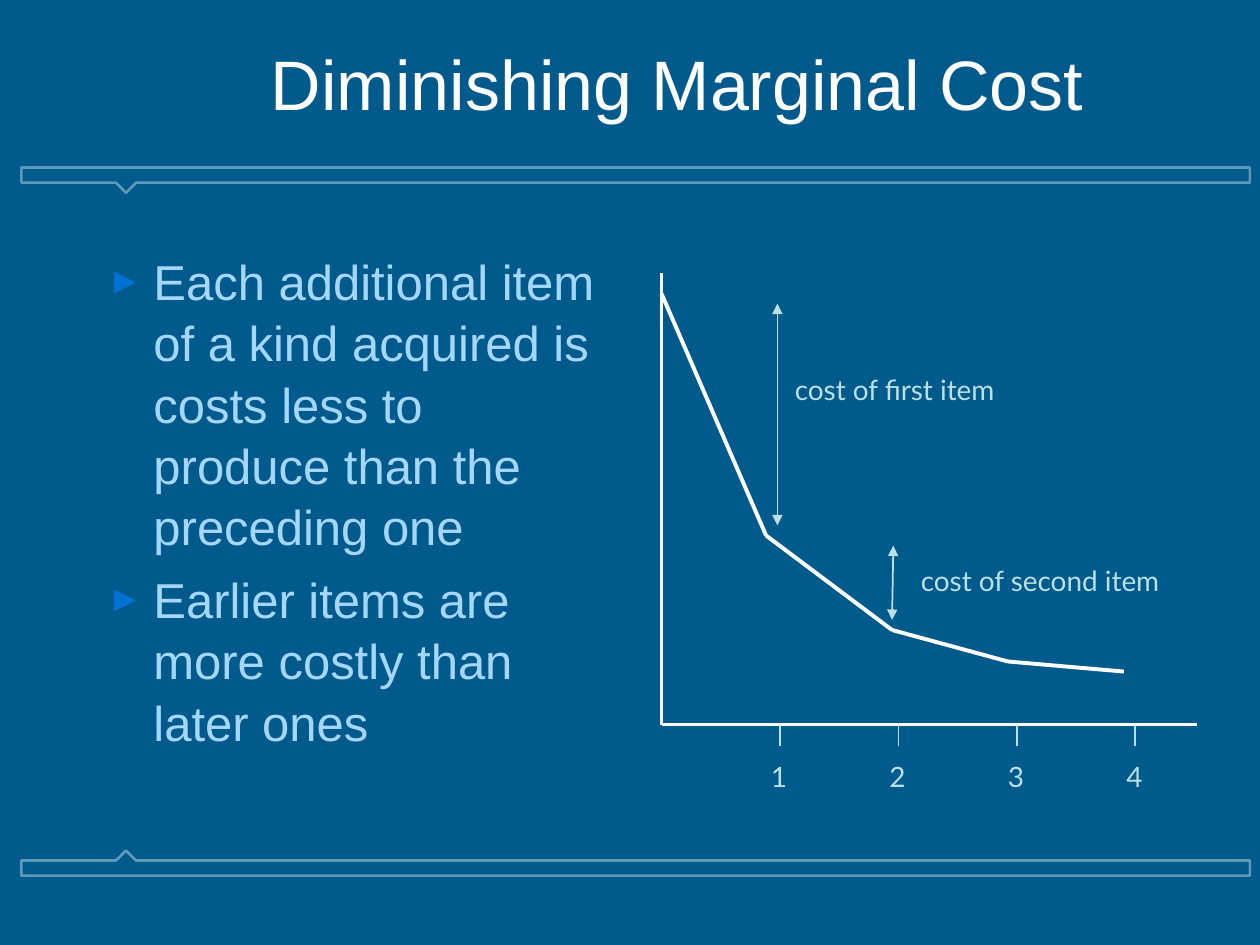
from dataclasses import dataclass
from itertools import pairwise

import pptx
import pptx.dml.color
import pptx.enum.shapes
import pptx.enum.text
import pptx.oxml.ns
import pptx.util
from lxml import etree
from pptx.util import Inches

RGBColor = pptx.dml.color.RGBColor
Align = pptx.enum.text.PP_ALIGN
Anchor = pptx.enum.text.MSO_ANCHOR
qn = pptx.oxml.ns.qn

NAVY = RGBColor(0x00, 0x5A, 0x8C)
STEEL = RGBColor(0x5F, 0x99, 0xB9)
WHITE = RGBColor(0xFF, 0xFF, 0xFF)
SKY = RGBColor(0xA5, 0xD6, 0xFF)
BLUE = RGBColor(0x00, 0x72, 0xD1)
PALE = RGBColor(0xBB, 0xE0, 0xE3)

Point = tuple[float, float]


@dataclass
class Band:
    edge: float
    turn: int


@dataclass
class Label:
    text: str
    left: float
    top: float
    width: float
    align: Align = Align.LEFT


@dataclass
class Stroke:
    start: Point
    end: Point
    color: RGBColor = WHITE
    width: float = 2.25
    arrows: bool = False


def add_run(para, text: str, font: str, size: float, color: RGBColor) -> None:
    run = para.add_run()
    run.text = text
    run.font.name = font
    run.font.size = pptx.util.Pt(size)
    run.font.color.rgb = color


def draw_band(slide, band: Band) -> None:
    left, right, mid, half = 0.17, 9.92, 1.0, 0.08
    inner = band.edge + band.turn * 0.12
    tip = band.edge + band.turn * 0.2
    points = [(right, band.edge), (right, inner), (mid + half, inner),
              (mid, tip), (mid - half, inner), (left, inner)]
    pen = slide.shapes.build_freeform(Inches(left), Inches(band.edge))
    pen.add_line_segments([(Inches(x), Inches(y)) for x, y in points])
    shape = pen.convert_to_shape()
    shape.shadow.inherit = False
    shape.fill.solid()
    shape.fill.fore_color.rgb = NAVY
    shape.line.color.rgb = STEEL
    shape.line.width = pptx.util.Pt(1.5)


def draw_stroke(slide, stroke: Stroke) -> None:
    ends = [Inches(v) for v in (*stroke.start, *stroke.end)]
    kind = pptx.enum.shapes.MSO_CONNECTOR.STRAIGHT
    line = slide.shapes.add_connector(kind, *ends)
    line.line.color.rgb = stroke.color
    line.line.width = pptx.util.Pt(stroke.width)
    props = line.element.spPr
    if stroke.arrows:
        for tag in ("a:headEnd", "a:tailEnd"):
            etree.SubElement(props.find(qn("a:ln")), qn(tag), type="triangle")
    etree.SubElement(props, qn("a:effectLst"))


def draw_label(slide, label: Label) -> None:
    box = slide.shapes.add_textbox(Inches(label.left), Inches(label.top),
                                   Inches(label.width), Inches(0.37))
    box.text_frame.word_wrap = True
    para = box.text_frame.paragraphs[0]
    para.alignment = label.align
    add_run(para, label.text, "Lato", 16, PALE)


def add_bullet(para) -> None:
    props = para._p.get_or_add_pPr()
    props.set("marL", str(Inches(0.37)))
    props.set("indent", str(-Inches(0.37)))
    color = etree.SubElement(props, qn("a:buClr"))
    etree.SubElement(color, qn("a:srgbClr"), val=str(BLUE))
    etree.SubElement(props, qn("a:buSzPct"), val="75000")
    etree.SubElement(props, qn("a:buFont"), typeface="Arial")
    etree.SubElement(props, qn("a:buChar"), char="►")


def draw_title(slide, text: str) -> None:
    title = slide.shapes.title
    title.left, title.top = Inches(2.05), Inches(0.27)
    title.width, title.height = Inches(7.62), Inches(0.77)
    frame = title.text_frame
    frame.auto_size = pptx.enum.text.MSO_AUTO_SIZE.NONE
    frame.vertical_anchor = Anchor.MIDDLE
    frame.paragraphs[0].alignment = Align.LEFT
    add_run(frame.paragraphs[0], text, "Arial", 40, WHITE)


def draw_body(slide, items: list[str]) -> None:
    box = slide.shapes.add_textbox(Inches(0.75), Inches(1.93),
                                   Inches(4.17), Inches(4.32))
    frame = box.text_frame
    frame.word_wrap = True
    for i, item in enumerate(items):
        para = frame.add_paragraph() if i else frame.paragraphs[0]
        add_bullet(para)
        para.line_spacing = 1.04
        para.space_before = pptx.util.Pt(7 if i else 0)
        add_run(para, item, "Arial", 28, SKY)


def draw_graph(slide) -> None:
    left, base, step = 5.25, 5.75, 0.94
    curve = [(left, 2.33), (6.08, 4.25), (7.08, 5), (8, 5.25), (8.92, 5.33)]
    strokes = [Stroke((left, 2.17), (left, base)),
               Stroke((9.5, base), (left, base))]
    strokes += [Stroke(a, b) for a, b in pairwise(curve)]
    strokes += [Stroke((6.17, 4.17), (6.17, 2.41), PALE, 1, True),
                Stroke((7.08, 4.92), (7.09, 4.33), PALE, 1, True)]
    labels = [Label("cost of first item", 6.21, 2.91, 1.86),
              Label("cost of second item", 7.21, 4.42, 2.17)]
    for n in range(1, 5):
        x = left + n * step
        strokes.append(Stroke((x, base), (x, base + 0.17), PALE, 1))
        labels.append(Label(str(n), x - 0.17, 5.98, 0.32, Align.CENTER))
    for stroke in strokes:
        draw_stroke(slide, stroke)
    for label in labels:
        draw_label(slide, label)


def main() -> None:
    deck = pptx.Presentation()
    deck.slide_width, deck.slide_height = Inches(10), Inches(7.5)
    slide = deck.slides.add_slide(deck.slide_layouts[5])
    slide.background.fill.solid()
    slide.background.fill.fore_color.rgb = NAVY
    for band in (Band(6.95, -1), Band(1.33, 1)):
        draw_band(slide, band)
    draw_title(slide, "Diminishing Marginal Cost")
    draw_body(slide, [
        "Each additional item of a kind acquired is costs less to "
        "produce than the preceding one",
        "Earlier items are more costly than later ones",
    ])
    draw_graph(slide)
    deck.save("out.pptx")


if __name__ == "__main__":
    main()
